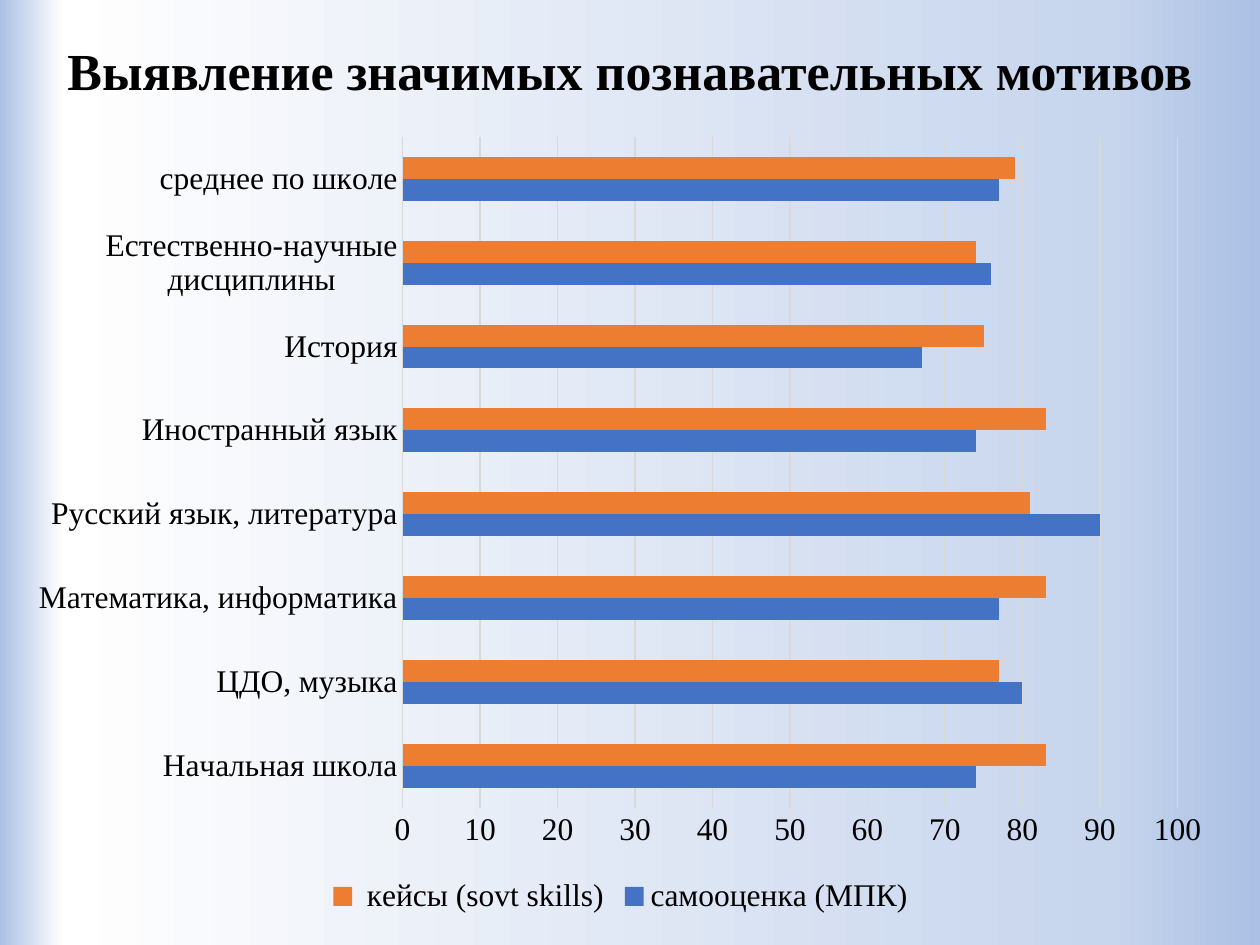
from lxml import etree
from pptx import Presentation
from pptx.chart.data import CategoryChartData as Data
from pptx.dml.color import RGBColor
from pptx.enum.chart import XL_CHART_TYPE as Kind, XL_LEGEND_POSITION as Side, XL_TICK_MARK as Tick
from pptx.enum.text import MSO_ANCHOR as Anchor, PP_ALIGN as Align
from pptx.oxml.ns import qn
from pptx.util import Inches, Pt

BLACK = RGBColor(0, 0, 0)
GRAY = RGBColor(0xD9, 0xD9, 0xD9)
BLUE = RGBColor(0x44, 0x72, 0xC4)
ORANGE = RGBColor(0xED, 0x7D, 0x31)
EDGE = RGBColor(0xAB, 0xC0, 0xE4)
PALE = RGBColor(0xC7, 0xD5, 0xED)
WHITE = RGBColor(0xFF, 0xFF, 0xFF)
FACE = "Times New Roman"


def style(font, size):
    font.name = FACE
    font.size = Pt(size)
    font.color.rgb = BLACK


deck = Presentation()
deck.slide_width, deck.slide_height = Inches(10), Inches(7.5)
slide = deck.slides.add_slide(deck.slide_layouts[6])

fill = slide.background.fill
fill.gradient()
fill.gradient_angle = 180
stops = slide.background._cSld.find(".//" + qn("a:gsLst"))
for stop in list(stops):
    stops.remove(stop)
for place, color in [(0, EDGE), (12, PALE), (95, WHITE), (100, EDGE)]:
    stop = etree.SubElement(stops, qn("a:gs"), pos=str(place * 1000))
    etree.SubElement(stop, qn("a:srgbClr"), val=str(color))

box = slide.shapes.add_textbox(Inches(0.28), Inches(0.21), Inches(9.45), Inches(0.75))
frame = box.text_frame
frame.word_wrap = True
frame.vertical_anchor = Anchor.MIDDLE
frame.text = "Выявление значимых познавательных мотивов"
title = frame.paragraphs[0]
title.alignment = Align.CENTER
title.line_spacing = 0.9
style(title.runs[0].font, 29.7)
title.runs[0].font.bold = True

data = Data()
data.categories = [
    "Начальная школа",
    "ЦДО, музыка",
    "Математика, информатика",
    "Русский язык, литература",
    "Иностранный язык",
    "История",
    "Естественно-научные дисциплины",
    "среднее по школе",
]
data.add_series("самооценка (МПК)", [74, 80, 77, 90, 74, 67, 76, 77])
data.add_series(" кейсы (sovt skills)", [83, 77, 83, 81, 83, 75, 74, 79])
chart = slide.shapes.add_chart(
    Kind.BAR_CLUSTERED, Inches(0.12), Inches(0.96), Inches(9.61), Inches(6.34), data
).chart
style(chart.font, 18)
chart.has_title = False
chart.has_legend = True
chart.legend.position = Side.BOTTOM
chart.legend.include_in_layout = False
style(chart.legend.font, 18)

plot = chart.plots[0]
plot.gap_width = 182
plot.overlap = 0
plot.vary_by_categories = False
for bar, color in zip(plot.series, [BLUE, ORANGE]):
    bar.format.fill.solid()
    bar.format.fill.fore_color.rgb = color

cats, vals = chart.category_axis, chart.value_axis
for axis in (cats, vals):
    axis.major_tick_mark = axis.minor_tick_mark = Tick.NONE
    style(axis.tick_labels.font, 18)
vals.minimum_scale, vals.maximum_scale, vals.major_unit = 0, 100, 10
vals.format.line.fill.background()
for line in (cats.format.line, vals.major_gridlines.format.line):
    line.color.rgb = GRAY
    line.width = Pt(0.75)

area = chart._chartSpace.find(".//" + qn("c:plotArea"))
for old in area.findall(qn("c:layout")):
    area.remove(old)
layout = etree.Element(qn("c:layout"))
area.insert(0, layout)
manual = etree.SubElement(layout, qn("c:manualLayout"))
for tag, val in [
    ("layoutTarget", "inner"), ("xMode", "edge"), ("yMode", "edge"),
    ("x", "0.32"), ("y", "0.02"), ("w", "0.64"), ("h", "0.84"),
]:
    etree.SubElement(manual, qn("c:" + tag), val=val)

deck.save("out.pptx")
